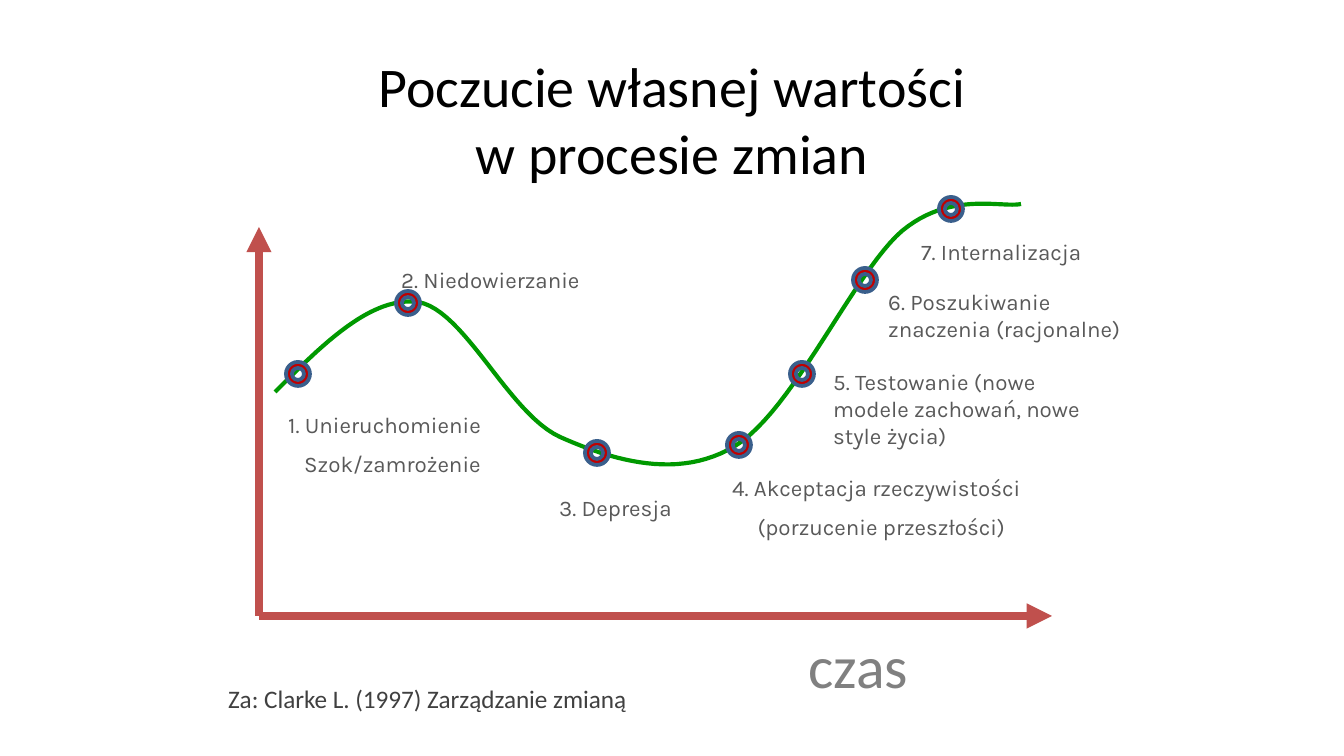
from lxml import etree
from pptx import Presentation
from pptx.dml.color import RGBColor
from pptx.enum.shapes import MSO_CONNECTOR, MSO_SHAPE
from pptx.enum.text import MSO_ANCHOR, PP_ALIGN
from pptx.oxml.ns import qn
from pptx.util import Pt

PX = 914400 / 134.4  # EMU per px
LEFT, CENTER = PP_ALIGN.LEFT, PP_ALIGN.CENTER
TOP, MIDDLE = MSO_ANCHOR.TOP, MSO_ANCHOR.MIDDLE


def emu(*lengths):
    return [round(length * PX) for length in lengths]


def add_text(box, lines, font, size, color, anchor=TOP):
    """Each line is (text, alignment, left indent in px); a line feed breaks the line."""
    frame = slide.shapes.add_textbox(*emu(*box)).text_frame
    frame.word_wrap = True
    frame.vertical_anchor = anchor
    for index, (text, alignment, indent) in enumerate(lines):
        paragraph = frame.paragraphs[0] if index == 0 else frame.add_paragraph()
        paragraph.alignment = alignment
        if index:
            paragraph.space_before = Pt(6)
        if indent:
            paragraph._p.get_or_add_pPr().set("marL", str(emu(indent)[0]))
        for part_index, part in enumerate(text.split("\n")):
            if part_index:
                paragraph.add_line_break()
            run = paragraph.add_run()
            run.text = part
            run.font.name = font
            run.font.size = Pt(size)
            run.font.color.rgb = RGBColor.from_string(color)


presentation = Presentation()
presentation.slide_width, presentation.slide_height = emu(1344, 756)
slide = presentation.slides.add_slide(presentation.slide_layouts[6])

# Title and time axis name
add_text((67, 56, 1210, 126), [("Poczucie własnej wartości\nw procesie zmian", CENTER, 0)],
         "Calibri", 30, "000000", MIDDLE)
add_text((795, 622, 200, 88), [("czas", LEFT, 0)], "Calibri", 32, "808080")

# Self-esteem curve: Bezier segments as two control points and an end point
curve_start = (275, 392)
curve_segments = [
    ((323, 344), (371, 296), (418, 302)),
    ((465, 310), (508, 413), (560, 437)),
    ((614, 461), (679, 480), (735, 446)),
    ((793, 411), (855, 271), (902, 231)),
    ((950, 191), (1001, 208), (1021, 204)),
]
STEPS = 24
curve_points = []
start = curve_start
for control_1, control_2, end in curve_segments:
    for step in range(1, STEPS + 1):
        t = step / STEPS
        weights = ((1 - t) ** 3, 3 * t * (1 - t) ** 2, 3 * t ** 2 * (1 - t), t ** 3)
        corners = (start, control_1, control_2, end)
        curve_points.append(emu(*(sum(w * corner[axis] for w, corner in zip(weights, corners))
                                  for axis in (0, 1))))
    start = end
builder = slide.shapes.build_freeform(*emu(*curve_start))
builder.add_line_segments(curve_points, close=False)
curve = builder.convert_to_shape()
curve.shadow.inherit = False
curve.fill.background()
curve.line.color.rgb = RGBColor.from_string("009900")
curve.line.width = Pt(2.25)

# Axes, both drawn from the origin
origin = (259, 616)
for tip in ((259, 227), (1052, 616)):
    axis_line = slide.shapes.add_connector(MSO_CONNECTOR.STRAIGHT, *emu(*origin, *tip))
    axis_line.line.color.rgb = RGBColor.from_string("C0504D")
    axis_line.line.width = Pt(4.5)
    etree.SubElement(axis_line.line._get_or_add_ln(), qn("a:tailEnd"), type="triangle")
    etree.SubElement(axis_line._element.spPr, qn("a:effectLst"))

# Stage labels
stages = [
    ((275, 405, 230, 82), [("1. Unieruchomienie", LEFT, 0), ("Szok/zamrożenie", LEFT, 16)]),
    ((388, 260, 230, 40), [("2. Niedowierzanie", LEFT, 0)]),
    ((546, 488, 159, 40), [("3. Depresja", LEFT, 0)]),
    ((719, 468, 325, 82), [("4. Akceptacja rzeczywistości", LEFT, 0),
                           ("(porzucenie przeszłości)", CENTER, 0)]),
    ((820, 362, 285, 95), [("5. Testowanie (nowe modele zachowań, nowe style życia)", LEFT, 0)]),
    ((875, 282, 262, 67), [("6. Poszukiwanie znaczenia (racjonalne)", LEFT, 0)]),
    ((908, 232, 230, 40), [("7. Internalizacja", LEFT, 0)]),
]
for box, lines in stages:
    add_text(box, lines, "Karla", 12, "595959")

# Stage markers, by centre
MARKER = 24
for x, y in ((298, 374), (408, 303), (597, 453), (739, 445), (802, 374), (865, 280), (951, 209)):
    marker = slide.shapes.add_shape(
        MSO_SHAPE.DONUT, *emu(x - MARKER / 2, y - MARKER / 2, MARKER, MARKER))
    marker.shadow.inherit = False
    marker.fill.solid()
    marker.fill.fore_color.rgb = RGBColor.from_string("C00000")
    marker.line.color.rgb = RGBColor.from_string("3A5F8C")
    marker.line.width = Pt(2)

# Source
add_text((215, 677, 512, 44), [("Za: Clarke L. (1997) Zarządzanie zmianą", LEFT, 0)],
         "Calibri", 13.5, "404040")

presentation.save("out.pptx")
